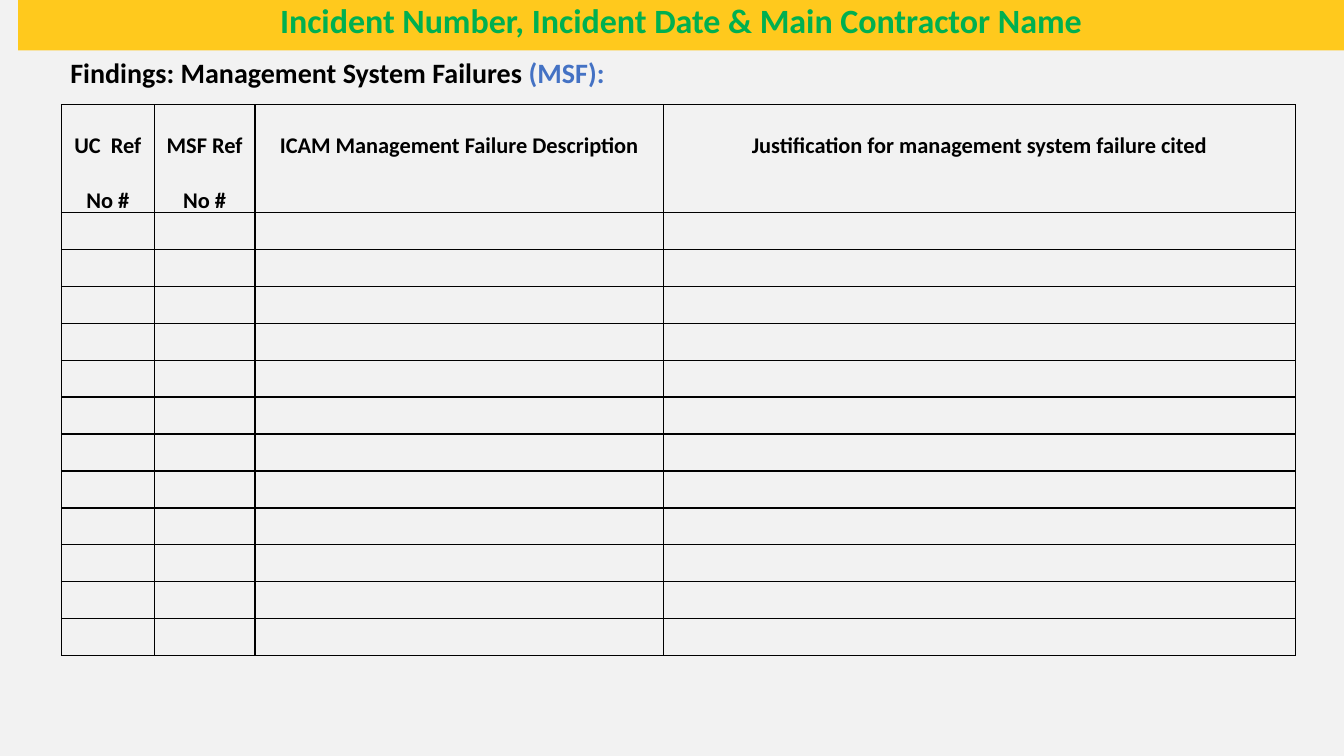
"""Build the management system failures slide of an incident report."""
from lxml.etree import SubElement
from pptx import Presentation
from pptx.dml.color import RGBColor
from pptx.enum.text import MSO_ANCHOR as Anchor, PP_ALIGN as Align
from pptx.oxml.ns import qn
from pptx.util import Inches, Pt

BLACK = RGBColor(0x00, 0x00, 0x00)
GREEN = RGBColor(0x00, 0xB0, 0x50)
BLUE = RGBColor(0x44, 0x72, 0xC4)
YELLOW = RGBColor(0xFF, 0xC9, 0x1D)
GREY = RGBColor(0xF2, 0xF2, 0xF2)

HEADERS = [
    "UC  Ref No #",
    "MSF Ref No #",
    "ICAM Management Failure Description",
    "Justification for management system failure cited",
]
COLUMN_WIDTHS = [0.92, 1, 4.05, 6.27]
EMPTY_ROWS = 12
HEADER_HEIGHT = 1.06
BODY_HEIGHT = 4.4


def set_font(font, size, color):
    """Apply the bold slide font."""
    font.name = "Calibri"
    font.size = Pt(size)
    font.bold = True
    font.color.rgb = color


def place(shape, left, top, width, height):
    """Move and size a shape, in inches."""
    shape.left, shape.top = Inches(left), Inches(top)
    shape.width, shape.height = Inches(width), Inches(height)


def fill_title(title, text):
    """Turn the title placeholder into the yellow banner."""
    place(title, 0.18, 0, 13.15, 0.5)
    title.fill.solid()
    title.fill.fore_color.rgb = YELLOW
    frame = title.text_frame
    frame.text = text
    frame.word_wrap = True
    frame.vertical_anchor = Anchor.MIDDLE
    frame.margin_top, frame.margin_bottom = 0, Inches(0.05)
    para = frame.paragraphs[0]
    para.alignment = Align.CENTER
    para.line_spacing = 0.9
    set_font(para.font, 24.3, GREEN)


def add_heading(slide, spans):
    """Add the one-line heading from (text, colour) spans."""
    box = slide.shapes.add_textbox(Inches(0.6), Inches(0.5), Inches(5.54), Inches(0.44))
    box.text_frame.word_wrap = False
    para = box.text_frame.paragraphs[0]
    for text, color in spans:
        span = para.add_run()
        span.text = text
        set_font(span.font, 20, color)


def format_cell(cell):
    """Clear the fill and padding of a cell and draw its thin black borders."""
    cell.margin_left = cell.margin_right = Inches(0.07)
    cell.margin_top = cell.margin_bottom = 0
    properties = cell._tc.get_or_add_tcPr()
    for side in ("a:lnL", "a:lnR", "a:lnT", "a:lnB"):
        line = SubElement(properties, qn(side), w=str(Pt(1)))
        fill = SubElement(line, qn("a:solidFill"))
        SubElement(fill, qn("a:srgbClr"), val=str(BLACK))
    cell.fill.background()


def add_failure_table(slide):
    """Add the table with its header row and empty rows."""
    frame = slide.shapes.add_table(
        EMPTY_ROWS + 1, len(HEADERS), Inches(0.61), Inches(1.04),
        Inches(sum(COLUMN_WIDTHS)), Inches(HEADER_HEIGHT + BODY_HEIGHT))
    table = frame.table
    table.first_row = table.horz_banding = False
    for column, width in zip(table.columns, COLUMN_WIDTHS):
        column.width = Inches(width)
    for row in table.rows:
        row.height = Inches(BODY_HEIGHT / EMPTY_ROWS)
    table.rows[0].height = Inches(HEADER_HEIGHT)
    for cell in table.iter_cells():
        format_cell(cell)
    for cell, header in zip(table.rows[0].cells, HEADERS):
        cell.text = header
        para = cell.text_frame.paragraphs[0]
        para.alignment = Align.CENTER
        para.line_spacing = 2
        set_font(para.font, 16, BLACK)


def main():
    """Build and save the deck."""
    deck = Presentation()
    deck.slide_width, deck.slide_height = Inches(13.33), Inches(7.5)
    slide = deck.slides.add_slide(deck.slide_layouts[5])
    slide.background.fill.solid()
    slide.background.fill.fore_color.rgb = GREY
    fill_title(slide.shapes.title, "Incident Number, Incident Date & Main Contractor Name")
    add_heading(slide, [("Findings: Management System Failures ", BLACK), ("(MSF):", BLUE)])
    add_failure_table(slide)
    deck.save("out.pptx")


if __name__ == "__main__":
    main()
